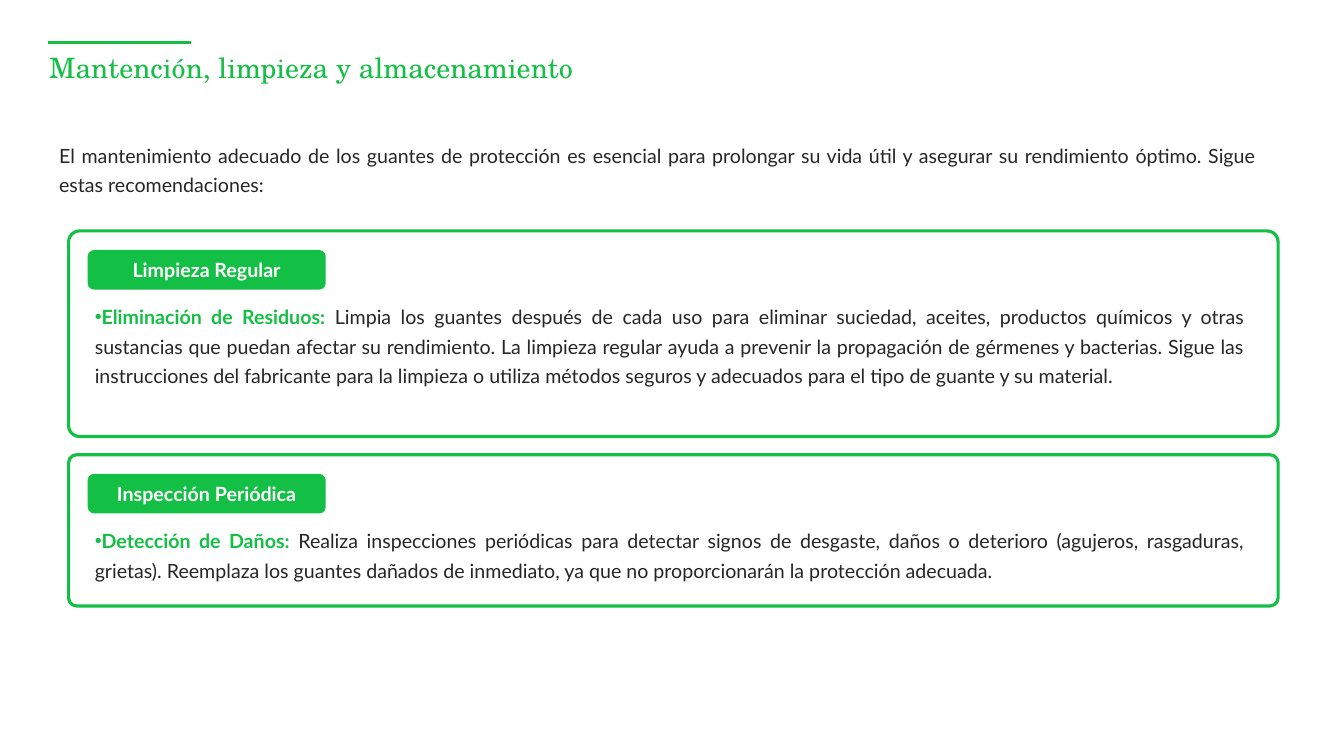
from dataclasses import dataclass

from lxml import etree
from pptx import Presentation
from pptx.dml.color import RGBColor
from pptx.enum.shapes import MSO_CONNECTOR, MSO_SHAPE
from pptx.enum.text import MSO_ANCHOR, MSO_AUTO_SIZE, PP_ALIGN
from pptx.oxml.ns import qn
from pptx.util import Cm, Pt

ROUND = MSO_SHAPE.ROUNDED_RECTANGLE
LINE = MSO_CONNECTOR.STRAIGHT
MIDDLE = MSO_ANCHOR.MIDDLE
GROW = MSO_AUTO_SIZE.SHAPE_TO_FIT_TEXT
CENTER, JUSTIFY = PP_ALIGN.CENTER, PP_ALIGN.JUSTIFY


@dataclass(frozen=True)
class Theme:
    green: RGBColor = RGBColor(0x13, 0xC0, 0x45)
    dark: RGBColor = RGBColor(0x26, 0x26, 0x26)
    white: RGBColor = RGBColor(0xFF, 0xFF, 0xFF)
    head: str = "TeX Gyre Schola"
    text: str = "Lato"
    large: Pt = Pt(20)
    small: Pt = Pt(14)
    rule: Pt = Pt(1.75)
    edge: Pt = Pt(2.25)


THEME = Theme()
HEAD = {"name": THEME.head, "size": THEME.large}
BODY = {"name": THEME.text, "size": THEME.small, "bold": False}
BOLD = BODY | {"bold": True}
BLOCK = {"alignment": JUSTIFY, "line_spacing": 1.25}

INTRO = (
    "El mantenimiento adecuado de los guantes de protección es esencial para "
    "prolongar su vida útil y asegurar su rendimiento óptimo. Sigue estas "
    "recomendaciones:"
)
CARDS = [
    (
        5.18,
        "Limpieza Regular",
        "Eliminación de Residuos: ",
        "Limpia los guantes después de cada uso para eliminar suciedad, aceites, "
        "productos químicos y otras sustancias que puedan afectar su rendimiento. "
        "La limpieza regular ayuda a prevenir la propagación de gérmenes y "
        "bacterias. Sigue las instrucciones del fabricante para la limpieza o "
        "utiliza métodos seguros y adecuados para el tipo de guante y su material.",
    ),
    (
        3.81,
        "Inspección Periódica",
        "Detección de Daños: ",
        "Realiza inspecciones periódicas para detectar signos de desgaste, daños o "
        "deterioro (agujeros, rasgaduras, grietas). Reemplaza los guantes dañados "
        "de inmediato, ya que no proporcionarán la protección adecuada.",
    ),
]


def apply(target, values):
    for name, value in values.items():
        setattr(target, name, value)


def write(shape, runs, layout, frame):
    """Fill the first paragraph with (text, font values, colour) runs."""
    apply(shape.text_frame, {"word_wrap": True} | frame)
    para = shape.text_frame.paragraphs[0]
    apply(para, layout)
    for text, font, color in runs:
        run = para.add_run()
        run.text = text
        apply(run.font, font)
        run.font.color.rgb = color
    return para


def add_text(shapes, box, runs, layout, frame):
    return write(shapes.add_textbox(*map(Cm, box)), runs, layout, frame)


def add_round(shapes, box, fill):
    shape = shapes.add_shape(ROUND, *map(Cm, box))
    shape.shadow.inherit = False
    shape.fill.solid()
    shape.fill.fore_color.rgb = fill
    return shape


def add_bullet(para):
    props = para._p.get_or_add_pPr()
    props.set("marL", "0")
    props.set("indent", str(-Cm(0.79)))
    color = etree.SubElement(props, qn("a:buClr"))
    etree.SubElement(color, qn("a:srgbClr"), val=str(THEME.green))
    etree.SubElement(props, qn("a:buFont"), typeface="Arial")
    etree.SubElement(props, qn("a:buChar"), char="•")


def add_head(slide, box):
    left, top, width, height = box
    y = Cm(top - 0.3)
    rule = slide.shapes.add_connector(LINE, Cm(left), y, Cm(left + 3.6), y)
    rule.line.color.rgb = THEME.green
    rule.line.width = THEME.rule
    etree.SubElement(rule._element.spPr, qn("a:effectLst"))
    sides = ("left", "top", "right", "bottom")
    add_text(
        slide.shapes,
        (left + 0.02, top, width, height),
        [("Mantención, limpieza y almacenamiento", HEAD, THEME.green)],
        {"line_spacing": 0.9},
        {f"margin_{side}": 0 for side in sides},
    )


def add_intro(slide, box):
    add_text(
        slide.shapes,
        box,
        [(INTRO, BODY, THEME.dark)],
        BLOCK | {"space_after": Pt(6)},
        {"auto_size": GROW},
    )


def add_card(slide, box, label, lead, detail):
    left, top, width, height = box
    shapes = slide.shapes.add_group_shape().shapes

    panel = add_round(shapes, box, THEME.white)
    panel.adjustments[0] = 0.053
    panel.line.color.rgb = THEME.green
    panel.line.width = THEME.edge

    para = add_text(
        shapes,
        (left + 0.41, top + 1.6, width - 0.99, height - 2.05),
        [(lead, BOLD, THEME.green), (detail, BODY, THEME.dark)],
        BLOCK | {"space_after": Pt(1)},
        {"auto_size": GROW},
    )
    add_bullet(para)

    tag = add_round(shapes, (left + 0.48, top + 0.48, 6, 1), THEME.green)
    tag.line.fill.background()
    write(
        tag,
        [(label, BOLD, THEME.white)],
        {"alignment": CENTER},
        {"vertical_anchor": MIDDLE},
    )


def main():
    deck = Presentation()
    deck.slide_width, deck.slide_height = Cm(33.87), Cm(19.05)
    slide = deck.slides.add_slide(deck.slide_layouts[6])
    add_head(slide, (1.22, 1.37, 27.41, 1.45))
    add_intro(slide, (1.24, 3.35, 30.68, 1.68))
    top, gap = 5.82, 0.46
    for height, *words in CARDS:
        add_card(slide, (1.73, top, 30.48, height), *words)
        top += height + gap
    deck.save("out.pptx")


if __name__ == "__main__":
    main()
